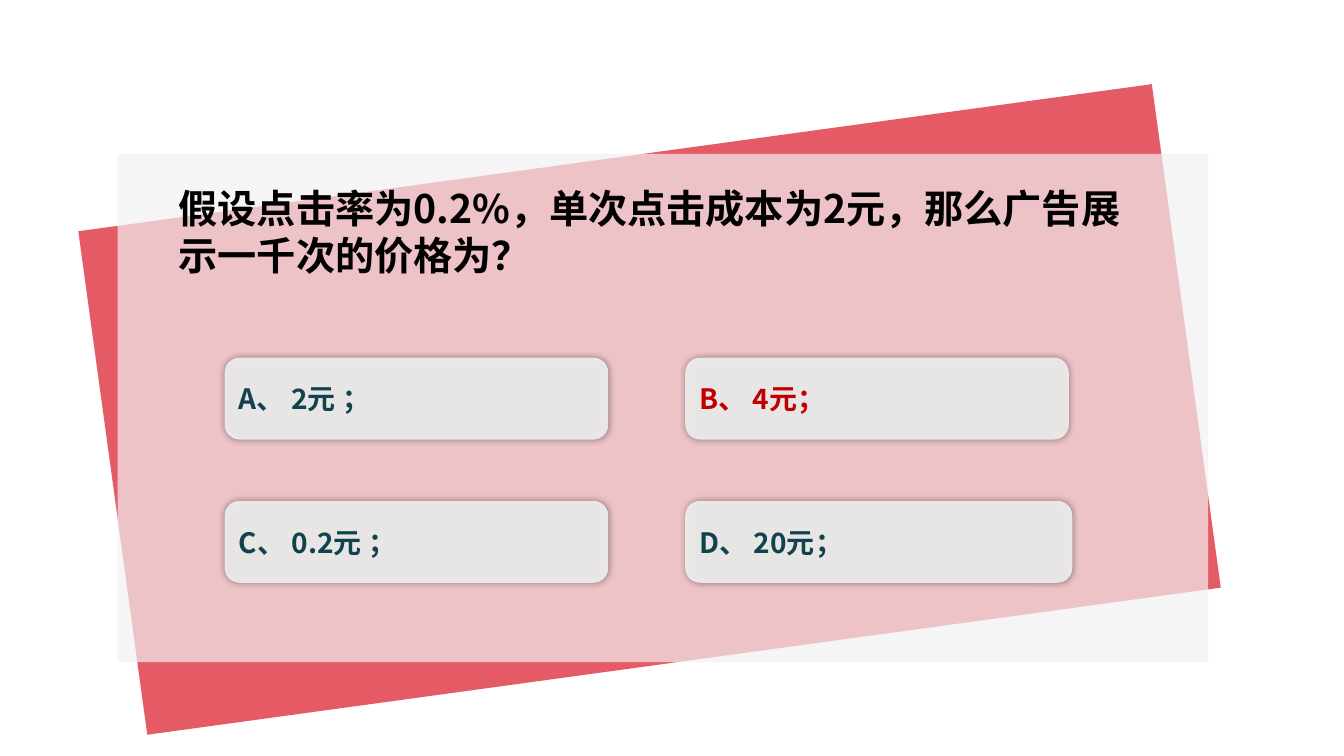
from pptx import Presentation
from pptx.dml.color import RGBColor
from pptx.enum.shapes import MSO_SHAPE
from pptx.enum.text import MSO_ANCHOR, PP_ALIGN
from pptx.oxml.ns import qn
from pptx.util import Pt
from lxml import etree

RECTANGLE = MSO_SHAPE.RECTANGLE
ROUNDED = MSO_SHAPE.ROUNDED_RECTANGLE
MIDDLE = MSO_ANCHOR.MIDDLE
LEFT = PP_ALIGN.LEFT

THEME = {
    "font": "Noto Sans CJK SC",
    "red": "D91524",
    "panel": "F1F1F1",
    "question": "000000",
    "option": "10434C",
    "answer": "C00000",
    "shadow": "000000",
    "question_size": 28,
    "option_size": 20,
}


def add_panel(kind, left, top, width, height, color, opacity):
    panel = slide.shapes.add_shape(kind, Pt(left), Pt(top), Pt(width), Pt(height))
    panel.shadow.inherit = False
    panel.line.fill.background()
    panel.fill.solid()
    panel.fill.fore_color.rgb = RGBColor.from_string(THEME[color])
    tint = panel.fill._xPr.find(qn("a:solidFill"))[0]
    etree.SubElement(tint, qn("a:alpha"), val=str(opacity * 1000))
    return panel


def write(frame, text, size, color):
    frame.word_wrap = True
    paragraph = frame.paragraphs[0]
    paragraph.text = text
    paragraph.alignment = LEFT
    font = paragraph.font
    font.size = Pt(THEME[size])
    font.bold = True
    font.color.rgb = RGBColor.from_string(THEME[color])
    font.name = THEME["font"]
    defaults = paragraph._p.pPr.find(qn("a:defRPr"))
    etree.SubElement(defaults, qn("a:ea"), typeface=THEME["font"])
    return paragraph


prs = Presentation()
prs.slide_width = Pt(960)
prs.slide_height = Pt(540)
slide = prs.slides.add_slide(prs.slide_layouts[6])

tilted_back = add_panel(RECTANGLE, 77, 111, 774, 363, "red", 70)
tilted_back.rotation = 352.2
add_panel(RECTANGLE, 84, 110, 779, 363, "panel", 70)

question = slide.shapes.add_textbox(Pt(120.5), Pt(128), Pt(714), Pt(75))
question_line = write(
    question.text_frame,
    "假设点击率为0.2%，单次点击成本为2元，那么广告展示一千次的价格为？",
    "question_size",
    "question",
)
question_line.line_spacing = Pt(33.6)

options = [
    ("A、 2元 ；", 0, 0, 274, "option"),
    ("C、 0.2元 ；", 0, 1, 274, "option"),
    ("D、 20元；", 1, 1, 276.5, "option"),
    ("B、 4元；", 1, 0, 274, "answer"),
]
for text, column, row, width, color in options:
    option = add_panel(
        ROUNDED, 160.5 + column * 329, 255.5 + row * 102.3, width, 58.5, "panel", 90
    )
    option.adjustments[0] = 0.18
    effects = option._element.spPr.find(qn("a:effectLst"))
    glow = etree.SubElement(
        effects, qn("a:outerShdw"), blurRad=str(Pt(5)), dist="0", dir="0", algn="ctr"
    )
    shade = etree.SubElement(glow, qn("a:srgbClr"), val=THEME["shadow"])
    etree.SubElement(shade, qn("a:alpha"), val="40000")
    option.text_frame.vertical_anchor = MIDDLE
    write(option.text_frame, text, "option_size", color)

prs.save("out.pptx")
